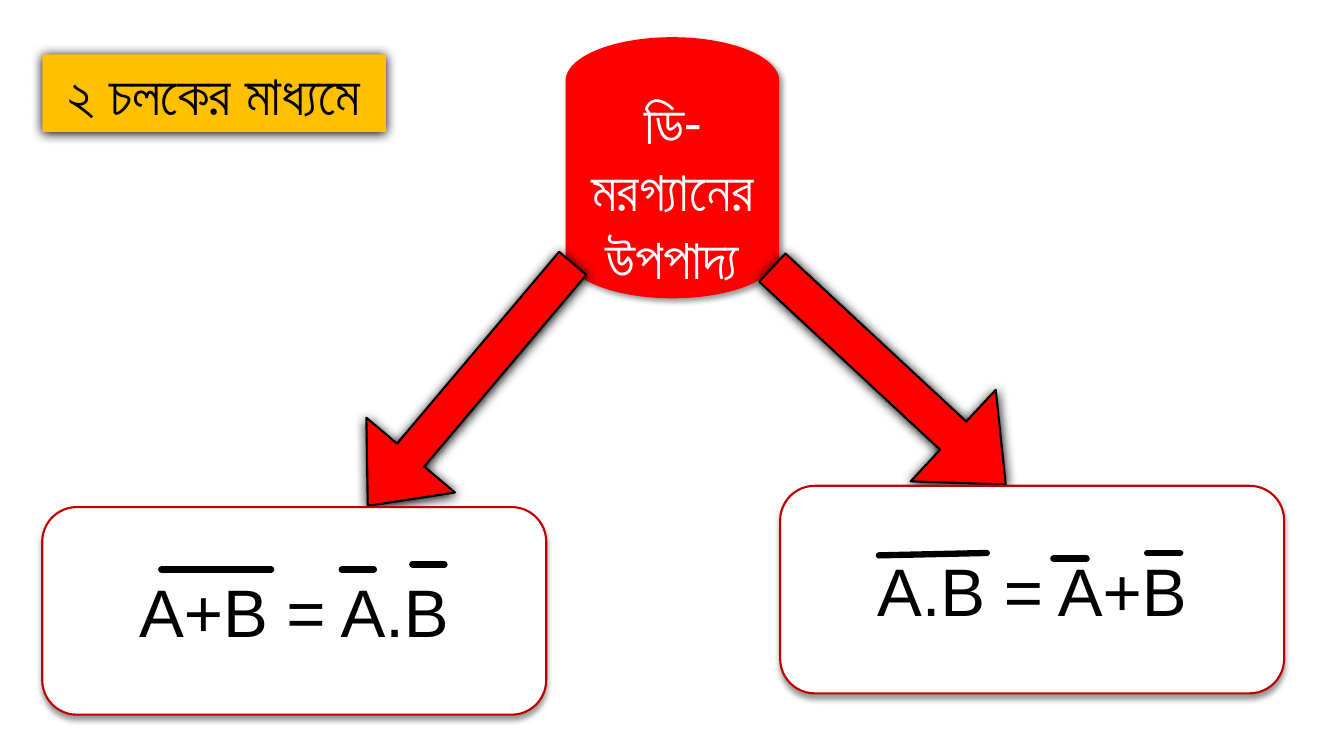
from lxml.etree import SubElement
from pptx import Presentation
from pptx.dml.color import RGBColor
from pptx.enum.shapes import MSO_CONNECTOR, MSO_SHAPE as Preset
from pptx.enum.text import MSO_ANCHOR as Anchor, MSO_AUTO_SIZE, PP_ALIGN
from pptx.oxml.ns import qn
from pptx.util import Pt

RED, BLACK, WHITE = "FF0000", "000000", "FFFFFF"
SOFT_SHADOW = {"opacity": 40, "blur": 4, "distance": 3}
STRONG_SHADOW = {"opacity": 100, "blur": 8.5, "distance": 1}


def color(hex_value):
    return RGBColor.from_string(hex_value)


def add_shadow(shape, opacity, blur, distance, angle=90):
    shape.shadow.inherit = False
    effects = shape._element.spPr.find(qn("a:effectLst"))
    shadow = SubElement(effects, qn("a:outerShdw"), blurRad=str(Pt(blur)),
                        dist=str(Pt(distance)), dir=str(angle * 60000),
                        algn="ctr", rotWithShape="0")
    black = SubElement(shadow, qn("a:srgbClr"), val=BLACK)
    SubElement(black, qn("a:alpha"), val=str(opacity * 1000))


def add_box(shapes, preset, bounds, fill, shadow, line=None):
    shape = shapes.add_shape(preset, *map(Pt, bounds))
    shape.fill.solid()
    shape.fill.fore_color.rgb = color(fill)
    if line:
        shape.line.color.rgb = color(line)
        shape.line.width = Pt(1.5)
    else:
        shape.line.fill.background()
    add_shadow(shape, **shadow)
    return shape


def write(shape, text, size, font, text_color, anchor=Anchor.MIDDLE):
    frame = shape.text_frame
    frame.word_wrap = True
    frame.vertical_anchor = anchor
    paragraph = frame.paragraphs[0]
    paragraph.alignment = PP_ALIGN.CENTER
    run = paragraph.add_run()
    run.text = text
    run.font.size = Pt(size)
    run.font.name = font
    run.font.color.rgb = color(text_color)
    SubElement(run.font._element, qn("a:cs"), typeface=font)


def add_arrow(shapes, bounds, rotation):
    arrow = add_box(shapes, Preset.DOWN_ARROW, bounds, RED, STRONG_SHADOW, BLACK)
    arrow.adjustments[0] = 0.307
    arrow.adjustments[1] = 0.573
    arrow.rotation = rotation


def add_overbar(shapes, start_x, start_y, end_x, end_y):
    bar = shapes.add_connector(MSO_CONNECTOR.STRAIGHT,
                               *map(Pt, (start_x, start_y, end_x, end_y)))
    bar.line.color.rgb = color(BLACK)
    bar.line.width = Pt(4.5)
    bar.line._get_or_add_ln().set("cap", "rnd")
    SubElement(bar._element.spPr, qn("a:effectLst"))


def add_formula(slide, left, top, text, overbars):
    """Formula card; each overbar is start x, start y, end x, end y."""
    shapes = slide.shapes.add_group_shape().shapes
    card = add_box(shapes, Preset.FLOWCHART_ALTERNATE_PROCESS,
                   (left, top, 360, 148.3), WHITE, SOFT_SHADOW, "C00000")
    write(card, text, 48, "Arial", BLACK)
    for overbar in overbars:
        add_overbar(shapes, *overbar)


def add_theorem(slide):
    shapes = slide.shapes.add_group_shape().shapes
    disk = add_box(shapes, Preset.FLOWCHART_MAGNETIC_DISK,
                   (404, 26.6, 152.6, 186.5), RED, {**SOFT_SHADOW, "angle": 45})
    write(disk, "ডি-মরগ্যানের উপপাদ্য", 40, "Roboto", WHITE)
    add_arrow(shapes, (294.5, 161.3, 82.8, 226.8), 40.2)
    add_arrow(shapes, (590.4, 154.8, 89.3, 227.5), 312.9)


def add_banner(slide):
    banner = add_box(slide.shapes, Preset.RECTANGLE, (30.2, 38.9, 245.5, 55.4),
                     "FFC000", STRONG_SHADOW)
    write(banner, "২ চলকের মাধ্যমে", 40, "Roboto", BLACK, Anchor.TOP)
    banner.text_frame.auto_size = MSO_AUTO_SIZE.SHAPE_TO_FIT_TEXT


def main():
    presentation = Presentation()
    presentation.slide_width, presentation.slide_height = Pt(960), Pt(540)
    slide = presentation.slides.add_slide(presentation.slide_layouts[6])
    add_theorem(slide)
    add_formula(slide, 30.2, 362.2, "A+B = A.B", [
        (115.2, 406.8, 193.7, 406.8),
        (244.1, 406.8, 267.1, 406.8),
        (294.5, 403.2, 317.5, 403.2),
    ])
    add_formula(slide, 557.3, 347, "A.B = A+B", [
        (627.8, 396.7, 704.9, 395),
        (752.4, 398.9, 776.2, 398.9),
        (819.4, 395, 843.1, 395),
    ])
    add_banner(slide)
    presentation.save("out.pptx")


if __name__ == "__main__":
    main()
